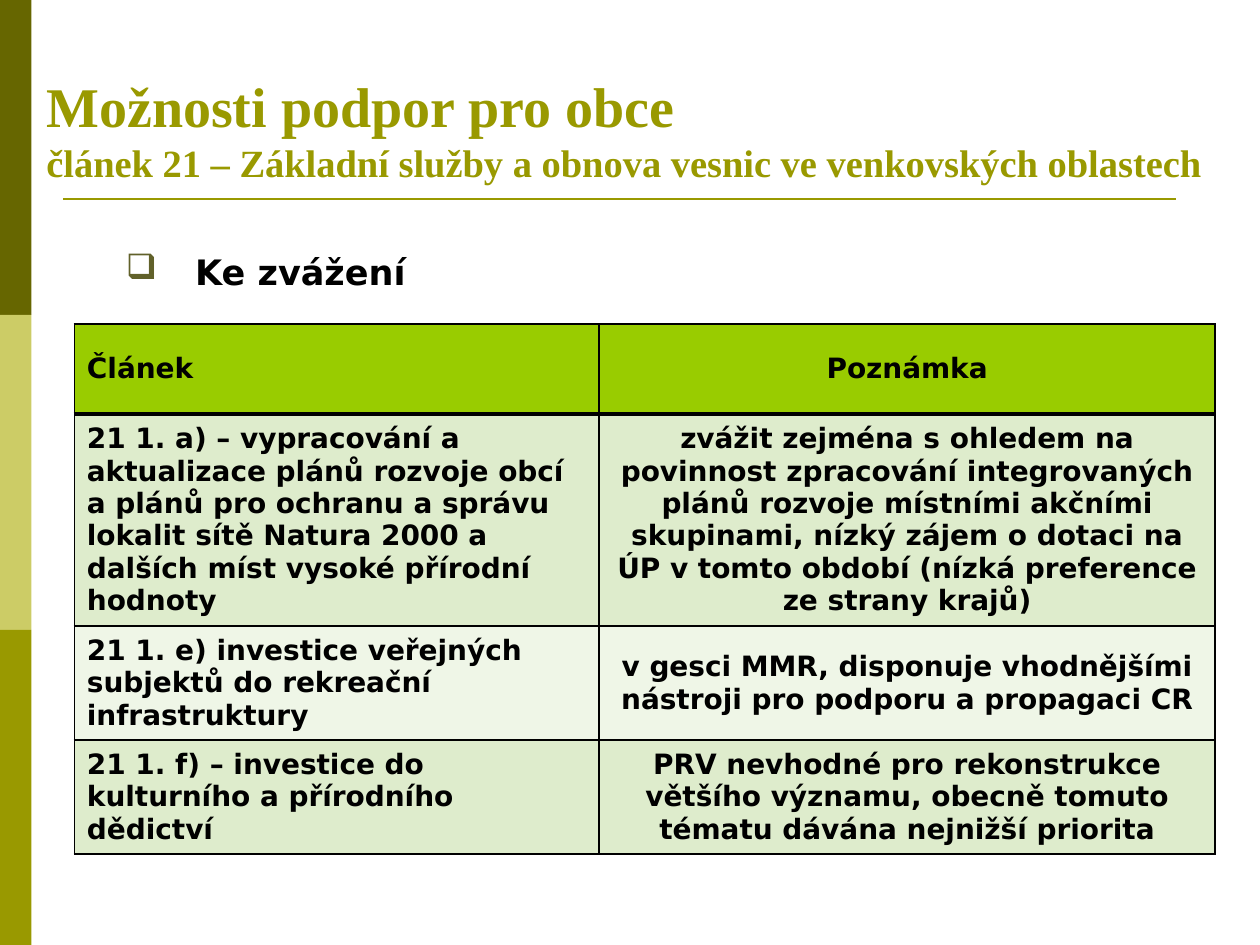
from lxml.etree import SubElement
from pptx import Presentation
from pptx.dml.color import RGBColor
from pptx.enum.shapes import MSO_CONNECTOR, MSO_SHAPE
from pptx.enum.text import MSO_ANCHOR, PP_ALIGN
from pptx.oxml.ns import qn
from pptx.util import Inches, Pt

HUES = {"dark": "666600", "pale": "CCCC66", "olive": "999900",
        "mark": "61612A", "ink": "000000", "head": "99CC00",
        "odd": "DEECCC", "even": "EFF6E7"}
SERIF, SANS = "Times New Roman", "DejaVu Sans"
COLS, ROWS = 40, 30
WIDE, HIGH = Inches(10), Inches(7.5)

GRID = [
    ("Článek", "Poznámka"),
    ("21 1. a) – vypracování a aktualizace plánů rozvoje obcí a plánů pro "
     "ochranu a správu lokalit sítě Natura 2000 a dalších míst vysoké "
     "přírodní hodnoty",
     "zvážit zejména s ohledem na povinnost zpracování integrovaných plánů "
     "rozvoje místními akčními skupinami, nízký zájem o dotaci na ÚP v tomto "
     "období (nízká preference ze strany krajů)"),
    ("21 1. e) investice veřejných subjektů do rekreační infrastruktury",
     "v gesci MMR, disponuje vhodnějšími nástroji pro podporu a propagaci CR"),
    ("21 1. f) – investice do kulturního a přírodního dědictví",
     "PRV nevhodné pro rekonstrukce většího významu, obecně tomuto tématu "
     "dávána nejnižší priorita"),
]


def across(n):
    return round(WIDE * n / COLS)


def down(n):
    return round(HIGH * n / ROWS)


def place(box):
    x, y, w, h = box
    return across(x), down(y), across(w), down(h)


def tint(name):
    return RGBColor.from_string(HUES[name])


def write(para, text, size, face, hue):
    run = para.add_run()
    run.text = text
    font = run.font
    font.size, font.name, font.bold = Pt(size), face, True
    font.color.rgb = tint(hue)


def side(slide, box):
    x, y, w, h = box
    part = h / 3
    for i, hue in enumerate(("dark", "pale", "olive")):
        bar = slide.shapes.add_shape(
            MSO_SHAPE.RECTANGLE, *place((x, y + i * part, w, part)))
        bar.shadow.inherit = False
        bar.fill.solid()
        bar.fill.fore_color.rgb = tint(hue)
        bar.line.fill.background()


def rule(slide, box):
    x, y, w, h = place(box)
    line = slide.shapes.add_connector(
        MSO_CONNECTOR.STRAIGHT, x, y, x + w, y + h)
    line.line.color.rgb = tint("olive")
    line.line.width = Pt(1.5)
    SubElement(line._element.spPr, qn("a:effectLst"))


def title(slide, box):
    frame = slide.shapes.add_textbox(*place(box)).text_frame
    frame.word_wrap = True
    frame.vertical_anchor = MSO_ANCHOR.BOTTOM
    para = frame.paragraphs[0]
    write(para, "Možnosti podpor pro obce", 32, SERIF, "olive")
    para.add_line_break()
    write(para, "článek 21 – Základní služby a obnova vesnic ve "
          "venkovských oblastech", 22, SERIF, "olive")


def point(slide, box):
    frame = slide.shapes.add_textbox(*place(box)).text_frame
    frame.word_wrap = True
    para = frame.paragraphs[0]
    para.alignment = PP_ALIGN.JUSTIFY
    para.space_before = Pt(12)
    props = para._p.get_or_add_pPr()
    dent = across(2.2)
    props.set("marL", str(dent))
    props.set("indent", str(-dent))
    mark = SubElement(props, qn("a:buClr"))
    SubElement(mark, qn("a:srgbClr"), val=HUES["mark"])
    SubElement(props, qn("a:buChar"), char="❑")
    write(para, "Ke zvážení", 20, SANS, "ink")


def edge(cell, top, base):
    props = cell._tc.get_or_add_tcPr()
    for tag, size in (("lnL", 1), ("lnR", 1), ("lnT", top), ("lnB", base)):
        line = SubElement(props, qn("a:" + tag), w=str(Pt(size)))
        fill = SubElement(line, qn("a:solidFill"))
        SubElement(fill, qn("a:srgbClr"), val=HUES["ink"])


def fill(cell, text, row, col):
    edge(cell, 3 if row == 1 else 1, 3 if row == 0 else 1)
    cell.fill.solid()
    cell.fill.fore_color.rgb = tint(
        "head" if row == 0 else "odd" if row % 2 else "even")
    cell.vertical_anchor = MSO_ANCHOR.MIDDLE
    para = cell.text_frame.paragraphs[0]
    if col:
        para.alignment = PP_ALIGN.CENTER
    if row and col:
        cell.margin_left = cell.margin_right = Inches(0.07)
        cell.margin_top = cell.margin_bottom = 0
    write(para, text, 16, SANS, "ink")


def notes(slide, box):
    table = slide.shapes.add_table(len(GRID), 2, *place(box)).table
    for col, share in zip(table.columns, (0.46, 0.54)):
        col.width = across(box[2] * share)
    for row, share in zip(table.rows, (0.17, 0.4, 0.215, 0.215)):
        row.height = down(box[3] * share)
    for r, texts in enumerate(GRID):
        for c, text in enumerate(texts):
            fill(table.cell(r, c), text, r, c)


def main():
    deck = Presentation()
    deck.slide_width, deck.slide_height = WIDE, HIGH
    slide = deck.slides.add_slide(deck.slide_layouts[6])
    side(slide, (0, 0, 1, ROWS))
    rule(slide, (2, 6.32, 35.32, 0))
    notes(slide, (2.36, 10.28, 36.22, 16.84))
    title(slide, (1.08, 2.08, 38.92, 4))
    point(slide, (3.6, 7.76, 23.64, 1.76))
    deck.save("out.pptx")


if __name__ == "__main__":
    main()
